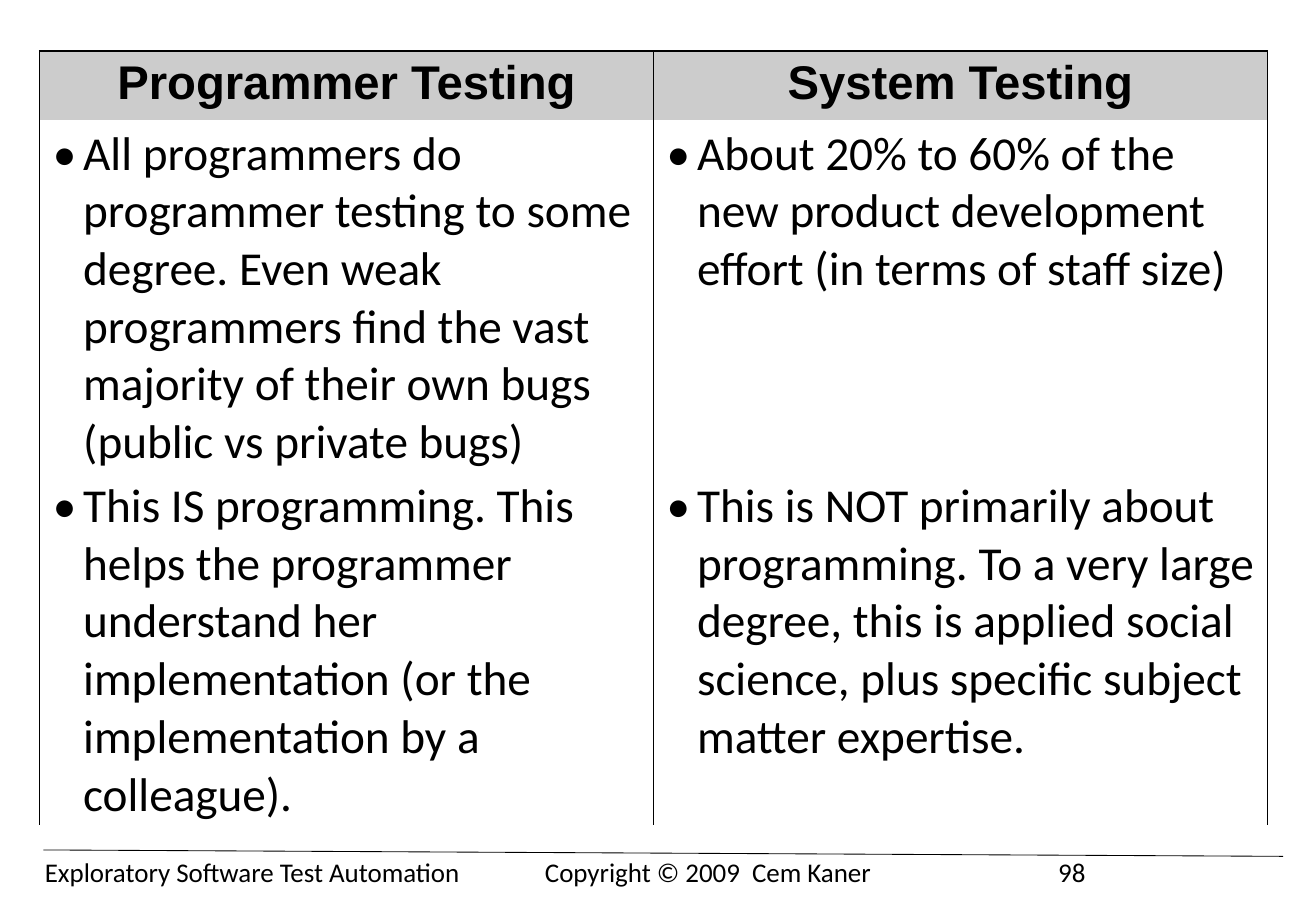
from lxml import etree
from pptx import Presentation
from pptx.dml.color import RGBColor
from pptx.enum.shapes import MSO_CONNECTOR
from pptx.enum.text import PP_ALIGN
from pptx.oxml.ns import qn
from pptx.util import Inches, Pt

STRAIGHT = MSO_CONNECTOR.STRAIGHT
CENTER = PP_ALIGN.CENTER
LEFT = PP_ALIGN.LEFT
WIDTH, HEIGHT = 10.83, 7.5
COLORS = {"ink": "000000", "header": "CCCCCC", "paper": "FFFFFF"}
COMPARISON = [
    ["Programmer Testing", "System Testing"],
    [
        "All programmers do programmer testing to some degree. Even weak programmers "
        "find the vast majority of their own bugs (public vs private bugs)",
        "About 20% to 60% of the new product development effort (in terms of staff size)",
    ],
    [
        "This IS programming. This helps the programmer understand her implementation "
        "(or the implementation by a colleague).",
        "This is NOT primarily about programming. To a very large degree, this is "
        "applied social science, plus specific subject matter expertise.",
    ],
]
FOOTER = ["Exploratory Software Test Automation", "Copyright © 2009  Cem Kaner", "98"]


class SlideBuilder:
    def __init__(self, presentation):
        self.slide = presentation.slides.add_slide(presentation.slide_layouts[6])

    def color(self, name):
        return RGBColor.from_string(COLORS[name])

    def share(self, x, y):
        return Inches(WIDTH * x), Inches(HEIGHT * y)

    def style(self, paragraph, font, size, bold=False):
        paragraph.font.name = font
        paragraph.font.size = Pt(size)
        paragraph.font.bold = bold
        paragraph.font.color.rgb = self.color("ink")

    def footer(self, x, y, width, height, parts, stops):
        box = self.slide.shapes.add_textbox(*self.share(x, y), *self.share(width, height))
        box.text_frame.word_wrap = True
        paragraph = box.text_frame.paragraphs[0]
        paragraph.text = "\t".join(parts)
        self.style(paragraph, "Calibri", 16)
        tabs = etree.Element(qn("a:tabLst"))
        for stop in stops:
            etree.SubElement(tabs, qn("a:tab"), pos=str(Inches(WIDTH * stop)), algn="l")
        paragraph._p.get_or_add_pPr().insert(0, tabs)

    def rule(self, start, end, weight):
        line = self.slide.shapes.add_connector(STRAIGHT, *self.share(*start), *self.share(*end))
        line.line.color.rgb = self.color("ink")
        line.line.width = Pt(weight)
        etree.SubElement(line._element.spPr, qn("a:effectLst"))

    def borders(self, cell, visible):
        properties = cell._tc.get_or_add_tcPr()
        for index, side in enumerate("LRTB"):
            border = etree.Element(qn(f"a:ln{side}"), w=str(Pt(1)))
            if side in visible:
                fill = etree.SubElement(border, qn("a:solidFill"))
                etree.SubElement(fill, qn("a:srgbClr"), val=COLORS["ink"])
            else:
                etree.SubElement(border, qn("a:noFill"))
            properties.insert(index, border)

    def bullet(self, paragraph):
        properties = paragraph._p.get_or_add_pPr()
        properties.set("marL", str(Inches(0.25)))
        properties.set("indent", str(-Inches(0.25)))
        etree.SubElement(properties, qn("a:buFont"), typeface="Calibri")
        etree.SubElement(properties, qn("a:buChar"), char="•")

    def cell(self, cell, text, is_header):
        cell.margin_left = cell.margin_right = Inches(0.11)
        cell.margin_top = Inches(0.05 if is_header else 0.04)
        cell.margin_bottom = Inches(0.05 if is_header else 0.01)
        cell.fill.solid()
        cell.fill.fore_color.rgb = self.color("header" if is_header else "paper")
        self.borders(cell, "LRT" if is_header else "LR")
        cell.text = text
        paragraph = cell.text_frame.paragraphs[0]
        paragraph.alignment = CENTER if is_header else LEFT
        if not is_header:
            self.bullet(paragraph)
        self.style(paragraph, "Arial" if is_header else "Calibri", 28, is_header)

    def table(self, x, y, width, heights, rows):
        frame = self.slide.shapes.add_table(
            len(rows), len(rows[0]), *self.share(x, y), *self.share(width, sum(heights))
        )
        table = frame.table
        table.first_row = table.horz_banding = False
        for row_index, (height, texts) in enumerate(zip(heights, rows)):
            table.rows[row_index].height = Inches(HEIGHT * height)
            for column_index, text in enumerate(texts):
                self.cell(table.cell(row_index, column_index), text, row_index == 0)


def main():
    presentation = Presentation()
    presentation.slide_width = Inches(WIDTH)
    presentation.slide_height = Inches(HEIGHT)
    builder = SlideBuilder(presentation)
    builder.footer(0.025, 0.933, 0.945, 0.05, FOOTER, [0.38, 0.77])
    builder.rule((0.033, 0.933), (0.975, 0.94), 0.5)
    builder.table(0.03, 0.056, 0.933, [0.076, 0.387, 0.387], COMPARISON)
    presentation.save("out.pptx")


if __name__ == "__main__":
    main()
